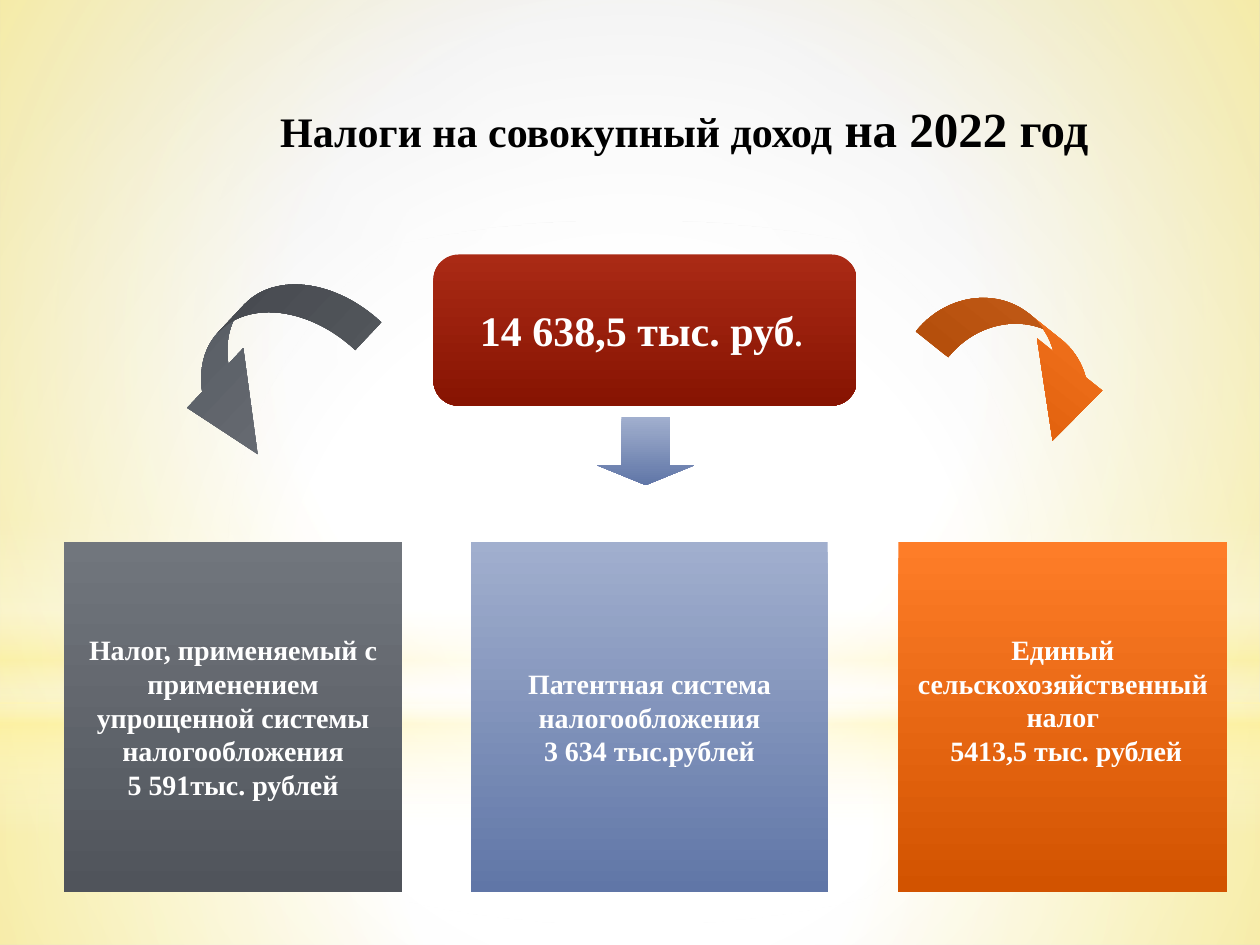
from dataclasses import dataclass
from typing import NamedTuple
from lxml.etree import SubElement
from pptx import Presentation
from pptx.dml.color import RGBColor
from pptx.enum.shapes import MSO_SHAPE as Kind
from pptx.enum.text import MSO_ANCHOR, PP_ALIGN
from pptx.oxml.ns import qn
from pptx.util import Inches, Pt


class Stop(NamedTuple):
    pos: int
    color: str
    alpha: int = 100


class Run(NamedTuple):
    text: str
    size: int


class Grad(NamedTuple):
    stops: tuple
    focus: tuple = ()  # left, top, right, bottom; empty means top to bottom


def fade(top: str, end: str) -> Grad:
    return Grad((Stop(0, top), Stop(100, end)))


CENTER = (50, 50, 50, 50)


@dataclass(frozen=True)
class Theme:
    font: str = "Times New Roman"
    ink: str = "000000"
    light: str = "FFFFFF"
    glow: str = "FFF39D"
    large: int = 28
    head: int = 24
    small: int = 18
    body: int = 16
    red: Grad = fade("AA2A15", "871402")
    gray: Grad = fade("71767D", "50545B")
    blue: Grad = fade("A1AFCE", "6076A7")
    orange: Grad = fade("FE7D28", "D25300")
    page: Grad = Grad((Stop(0, "FFFFFF"), Stop(42, "FFFFFF"),
                       Stop(100, "D1D1D1")), (24, 44, 24, 12))


T = Theme()


@dataclass(frozen=True)
class Part:
    kind: Kind
    box: tuple
    grad: Grad
    turn: float = 0
    adjust: tuple = ()


@dataclass(frozen=True)
class Card:
    left: float
    width: float
    grad: Grad
    lines: tuple
    foot: float = 0


def paint(fill, root, grad: Grad) -> None:
    """Give a fill its stops, opacity and direction."""
    fill.gradient()
    node = root.find(".//" + qn("a:gradFill"))
    for child in list(node):
        node.remove(child)
    node.set("rotWithShape", "1")
    stops = SubElement(node, qn("a:gsLst"))
    for stop in grad.stops:
        mark = SubElement(stops, qn("a:gs"), pos=str(stop.pos * 1000))
        color = SubElement(mark, qn("a:srgbClr"), val=stop.color)
        if stop.alpha < 100:
            SubElement(color, qn("a:alpha"), val=str(stop.alpha * 1000))
    if grad.focus:
        ring = SubElement(node, qn("a:path"), path="circle")
        sides = {k: str(v * 1000) for k, v in zip("ltrb", grad.focus)}
        SubElement(ring, qn("a:fillToRect"), sides)
    else:
        SubElement(node, qn("a:lin"), ang="5400000", scaled="0")


def draw(slide, part: Part):
    shape = slide.shapes.add_shape(part.kind, *map(Inches, part.box))
    shape.shadow.inherit = False
    shape.line.fill.background()
    paint(shape.fill, shape._element, part.grad)
    shape.rotation = part.turn
    for i, value in enumerate(part.adjust):
        shape.adjustments[i] = value
    return shape


def write(shape, rows: tuple, color: str, insets: tuple, anchor) -> None:
    """Fill a shape with centred bold paragraphs, each a tuple of runs."""
    frame = shape.text_frame
    frame.word_wrap = True
    frame.vertical_anchor = anchor
    (frame.margin_left, frame.margin_top,
     frame.margin_right, frame.margin_bottom) = map(Inches, insets)
    for i, row in enumerate(rows):
        para = frame.add_paragraph() if i else frame.paragraphs[0]
        para.alignment = PP_ALIGN.CENTER
        para.font.name, para.font.bold = T.font, True
        para.font.size = Pt(row[0].size)
        para.font.color.rgb = RGBColor.from_string(color)
        for item in row:
            run = para.add_run()
            run.text = item.text
            if len(row) > 1:
                run.font.size = Pt(item.size)


def tint(*marks: tuple) -> tuple:
    """Stops of white (W) or glow (G) as (position, key, opacity)."""
    return tuple(Stop(pos, T.light if key == "W" else T.glow, alpha)
                 for pos, key, alpha in marks)


GLOWS = (
    Part(Kind.RECTANGLE, (0, 5.58, 10, 1.92),
         Grad(tint((0, "W", 91), (37, "W", 76), (100, "G", 79)), CENTER)),
    Part(Kind.RECTANGLE, (0, 0, 10, 5.58),
         Grad(tint((0, "W", 89), (48, "W", 62), (100, "G", 79)), CENTER)),
    Part(Kind.RECTANGLE, (0, 4.12, 10, 2.5),
         Grad(tint((0, "W", 0), (29, "W", 30), (45, "G", 40),
                   (55, "W", 26), (65, "G", 60), (100, "W", 0)))),
    Part(Kind.OVAL, (0, 1.75, 10, 5.58),
         Grad(tint((0, "W", 100), (56, "W", 0)), CENTER)),
)

TOTAL = Part(Kind.ROUNDED_RECTANGLE, (3.44, 2.02, 3.36, 1.2), T.red)

CARDS = (
    Card(0.51, 2.68, T.gray,
         ("Налог, применяемый с применением упрощенной системы "
          "налогообложения", "5 591тыс. рублей")),
    Card(3.74, 2.83, T.blue,
         ("Патентная система налогообложения", "3 634 тыс.рублей")),
    Card(7.13, 2.61, T.orange,
         ("Единый сельскохозяйственный налог", " 5413,5 тыс. рублей"), 0.27),
)

ARROWS = (
    Part(Kind.CURVED_UP_ARROW, (1.22, 2.45, 1.76, 0.89), T.gray,
         133.2, (0.34, 0.73, 0.74)),
    Part(Kind.CURVED_DOWN_ARROW, (7.29, 2.57, 1.72, 0.67), T.orange,
         38.6, (0.49, 0.99, 0.83)),
    Part(Kind.DOWN_ARROW, (4.74, 3.31, 0.77, 0.54), T.blue,
         0, (0.5, 0.29)),
)


def main() -> None:
    deck = Presentation()
    deck.slide_width, deck.slide_height = Inches(10), Inches(7.5)
    slide = deck.slides.add_slide(deck.slide_layouts[6])

    # Background and soft glows
    paint(slide.background.fill, slide._element, T.page)
    for glow in GLOWS:
        draw(slide, glow)

    # Title
    title = slide.shapes.add_textbox(*map(Inches, (0.83, 0.68, 9.06, 0.98)))
    write(title, ((Run("Налоги на совокупный доход", T.head),
                   Run(" на 2022 год", T.large)),),
          T.ink, (0.24, 0.1, 0.1, 0.05), MSO_ANCHOR.TOP)

    # Total
    write(draw(slide, TOTAL),
          ((Run("14 638,5 тыс. руб", T.head), Run(". ", T.small)),),
          T.light, (0.14, 0.05, 0.14, 0.05), MSO_ANCHOR.MIDDLE)

    # Tax cards
    for card in CARDS:
        part = Part(Kind.RECTANGLE, (card.left, 4.3, card.width, 2.78),
                    card.grad)
        rows = tuple((Run(line, T.body),) for line in card.lines)
        write(draw(slide, part), rows, T.light,
              (0.12, 0, 0.12, card.foot), MSO_ANCHOR.MIDDLE)

    # Arrows
    for arrow in ARROWS:
        draw(slide, arrow)

    deck.save("out.pptx")


if __name__ == "__main__":
    main()
